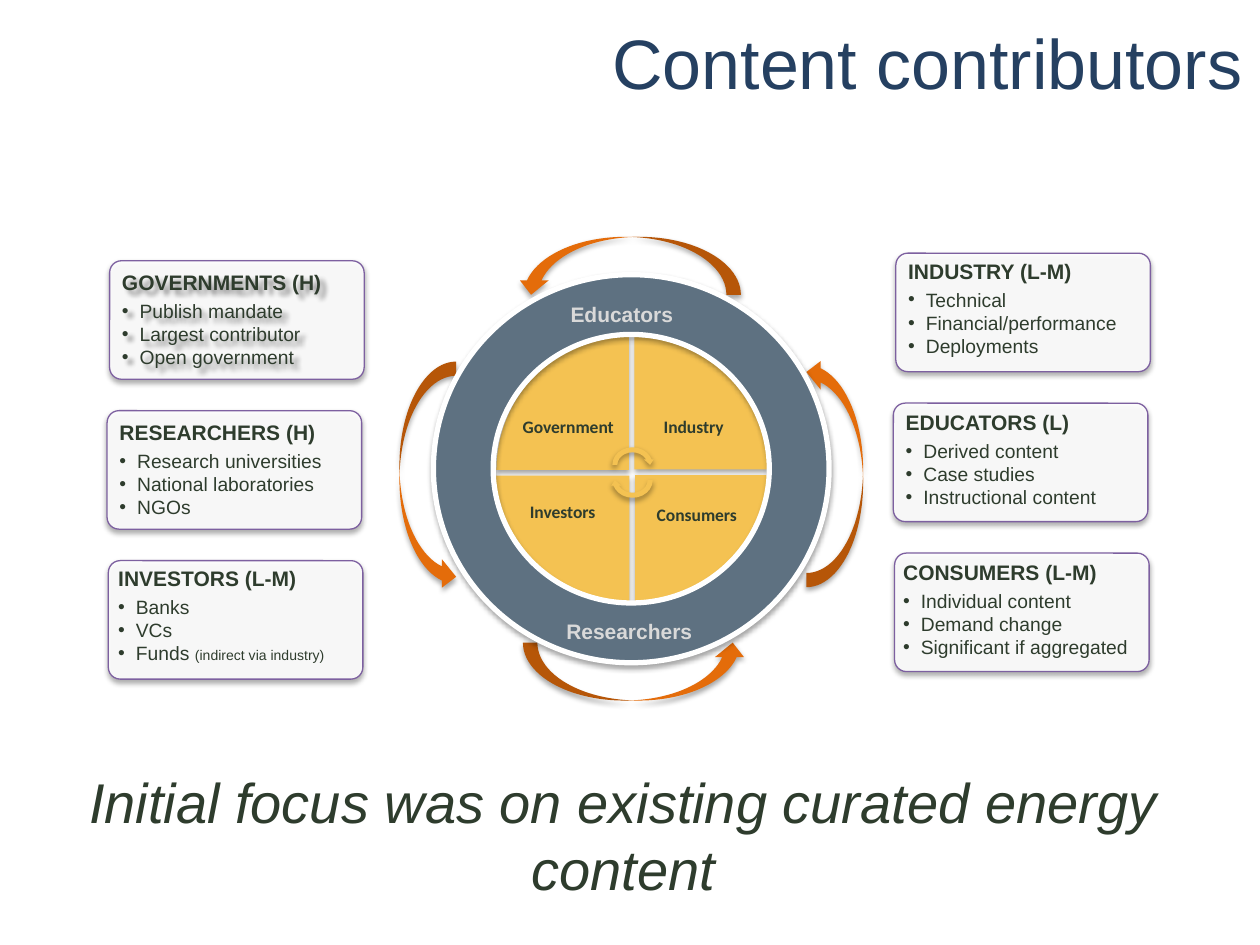
from dataclasses import dataclass

from lxml import etree
from pptx import Presentation
from pptx import util as u
from pptx.dml.color import RGBColor
from pptx.enum import shapes, text
from pptx.oxml.ns import qn

COLUMNS, ROWS = 100, 75
KIND = shapes.MSO_SHAPE


@dataclass(frozen=True)
class Theme:
    font: str = "Arial"
    label_font: str = "Calibri"
    navy: str = "254061"
    ink: str = "2E3C2D"
    white: str = "FFFFFF"
    purple: str = "7D60A0"
    orange: str = "E46C0A"
    yellow: str = "F4C252"
    slate: str = "5E7181"
    silver: str = "D9D9D9"
    title: int = 40
    message: int = 32
    heading: int = 12
    body: int = 11
    label: int = 10
    note: int = 8


class SlideBuilder:
    """Draws on one slide; places are (left, top, width, height) in grid units."""

    def __init__(self, presentation, theme):
        self.theme = theme
        self.slide = presentation.slides.add_slide(presentation.slide_layouts[6])
        self.column = presentation.slide_width / COLUMNS
        self.row = presentation.slide_height / ROWS

    def emu(self, place):
        left, top, width, height = place
        return (int(left * self.column), int(top * self.row),
                int(width * self.column), int(height * self.row))

    def shadow(self, shape, distance=1.8, direction=90, opacity=35):
        shape.shadow.inherit = False
        effects = shape._element.spPr.find(qn("a:effectLst"))
        outer = etree.SubElement(
            effects, qn("a:outerShdw"), blurRad=str(u.Pt(3.1)),
            dist=str(u.Pt(distance)), dir=str(direction * 60000), rotWithShape="0")
        color = etree.SubElement(outer, qn("a:srgbClr"), val="000000")
        etree.SubElement(color, qn("a:alpha"), val=str(opacity * 1000))

    def shape(self, kind, place, fill, line=None, width=0, rotation=0, adjust=None):
        shape = self.slide.shapes.add_shape(kind, *self.emu(place))
        shape.rotation = rotation
        if adjust is not None:
            shape.adjustments[0] = adjust
        shape.fill.solid()
        shape.fill.fore_color.rgb = RGBColor.from_string(fill)
        if line:
            shape.line.color.rgb = RGBColor.from_string(line)
            shape.line.width = u.Pt(width)
        else:
            shape.line.fill.background()
        self.shadow(shape)
        return shape

    def text_box(self, place, anchor=text.MSO_ANCHOR.TOP, inset=None):
        box = self.slide.shapes.add_textbox(*self.emu(place))
        frame = box.text_frame
        frame.word_wrap = True
        frame.vertical_anchor = anchor
        if inset is not None:
            frame.margin_left = int(inset * self.column)
            frame.margin_right = frame.margin_top = frame.margin_bottom = 0
        return box

    def style(self, paragraph, size, color, bold=False, italic=False, font=None):
        paragraph.font.name = font or self.theme.font
        paragraph.font.size = u.Pt(size)
        paragraph.font.bold = bold
        paragraph.font.italic = italic
        paragraph.font.color.rgb = RGBColor.from_string(color)

    def line(self, words, place, size, color, centered=True, inset=None,
             anchor=text.MSO_ANCHOR.MIDDLE, **style):
        """Adds a text box that holds one paragraph."""
        paragraph = self.text_box(place, anchor, inset).text_frame.paragraphs[0]
        paragraph.text = words
        paragraph.alignment = (text.PP_ALIGN.CENTER if centered
                               else text.PP_ALIGN.LEFT)
        self.style(paragraph, size, color, **style)

    def bullet(self, frame, words, note, first):
        paragraph = frame.add_paragraph()
        paragraph.add_run().text = words
        properties = paragraph._p.get_or_add_pPr()
        indent = u.Inches(0.14)
        properties.set("marL", str(indent))
        properties.set("indent", str(-indent))
        etree.SubElement(properties, qn("a:buFont"), typeface=self.theme.font)
        etree.SubElement(properties, qn("a:buChar"), char="•")
        if first:
            paragraph.space_before = u.Pt(2.5)
        self.style(paragraph, self.theme.body, self.theme.ink)
        if note:
            run = paragraph.add_run()
            run.text = note
            run.font.size = u.Pt(self.theme.note)

    def card(self, left, top, heading, items, text_shift, note="", text_shadow=False):
        theme = self.theme
        panel = self.shape(KIND.ROUNDED_RECTANGLE, (left, top, 20.2, 9.4),
                           theme.white, theme.purple, 0.75, adjust=0.1)
        color = panel._element.spPr.find(qn("a:solidFill"))[0]
        etree.SubElement(color, qn("a:alpha"), val="90000")
        shift_x, shift_y = text_shift
        box = self.text_box((left + shift_x, top + shift_y, 20.4, 8.9))
        if text_shadow:
            self.shadow(box, distance=4, direction=45, opacity=45)
        paragraph = box.text_frame.paragraphs[0]
        paragraph.text = heading
        self.style(paragraph, theme.heading, theme.ink, bold=True)
        for index, item in enumerate(items):
            last = index == len(items) - 1
            self.bullet(box.text_frame, item, note if last else "", index == 0)


CARDS = [
    [("GOVERNMENTS (H)",
      ["Publish mandate", "Largest contributor", "Open government"],
      (0, 0.2), "", True),
     ("RESEARCHERS (H)",
      ["Research universities", "National laboratories", "NGOs"], (0, 0.2)),
     ("INVESTORS (L-M)", ["Banks", "VCs", "Funds "], (-0.2, -0.1),
      "(indirect via industry)")],
    [("INDUSTRY (L-M)",
      ["Technical", "Financial/performance", "Deployments"], (0, -0.1)),
     ("EDUCATORS (L)",
      ["Derived content", "Case studies", "Instructional content"], (0, 0)),
     ("CONSUMERS (L-M)",
      ["Individual content", "Demand change", "Significant if aggregated"],
      (-0.3, 0))],
]
CARD_ORIGINS = [(8.7, 20.7), (71.1, 20.1)]
CARD_NUDGES = [0, -0.2, -0.1]
CARD_PITCH = 11.9

FLOW_ARROWS = [
    ((31.7, 28.7, 4.5, 18.2), 0),
    ((48.1, 44.4, 4.6, 17.8), 270),
    ((47.6, 12.2, 4.6, 17.8), 90),
    ((64, 28.4, 4.5, 18.2), 180),
]
WEDGES = [(0, 0), (1, 0), (1, 1), (0, 1)]
WEDGE_PITCH = 11
SECTORS = [
    ("Government", (40.8, 32.5, 8.6, 2.7)),
    ("Industry", (51, 31.5, 8.1, 4.7)),
    ("Investors", (40.4, 38.7, 8.5, 3.8)),
    ("Consumers", (50.4, 39.1, 9.8, 3.4)),
]
RING_CAPTIONS = [
    ("Educators", (43.4, 22.9, 11.9, 4)),
    ("Researchers", (43.1, 48.1, 13.7, 4)),
]


def draw_cards(builder):
    for (left, top), column in zip(CARD_ORIGINS, CARDS):
        for index, card in enumerate(column):
            builder.card(left + CARD_NUDGES[index], top + index * CARD_PITCH, *card)


def draw_wheel(builder):
    theme = builder.theme
    for place, rotation in FLOW_ARROWS:
        builder.shape(KIND.CURVED_RIGHT_ARROW, place, theme.orange, rotation=rotation)
    for index, (column, row) in enumerate(WEDGES):
        place = (39.4 + column * WEDGE_PITCH, 26.7 + row * WEDGE_PITCH, 10.5, 10.6)
        builder.shape(KIND.PIE_WEDGE, place, theme.yellow, rotation=index * 90)
    for top, rotation in [(35.3, 0), (36.5, 180)]:
        builder.shape(KIND.CIRCULAR_ARROW, (48.4, top, 3.6, 3.2), theme.yellow,
                      rotation=rotation)
    builder.shape(KIND.DONUT, (34.4, 21.8, 31.4, 30.8), theme.slate,
                  theme.white, 3, adjust=0.154)
    for words, place in SECTORS:
        builder.line(words, place, theme.label, theme.ink, inset=0, bold=True,
                     font=theme.label_font)
    for words, place in RING_CAPTIONS:
        builder.line(words, place, theme.heading, theme.silver, bold=True)


def main():
    presentation = Presentation()
    presentation.slide_width = u.Inches(10)
    presentation.slide_height = u.Inches(7.5)
    theme = Theme()
    builder = SlideBuilder(presentation, theme)
    builder.line("Content contributors", (46.2, 0.7, 53.8, 8.3), theme.title,
                 theme.navy, centered=False, inset=2.4)
    builder.line("Initial focus was on existing curated energy content",
                 (5.7, 60.4, 87.6, 6.4), theme.message, theme.ink, italic=True,
                 anchor=text.MSO_ANCHOR.TOP)
    draw_cards(builder)
    draw_wheel(builder)
    presentation.save("out.pptx")


if __name__ == "__main__":
    main()
